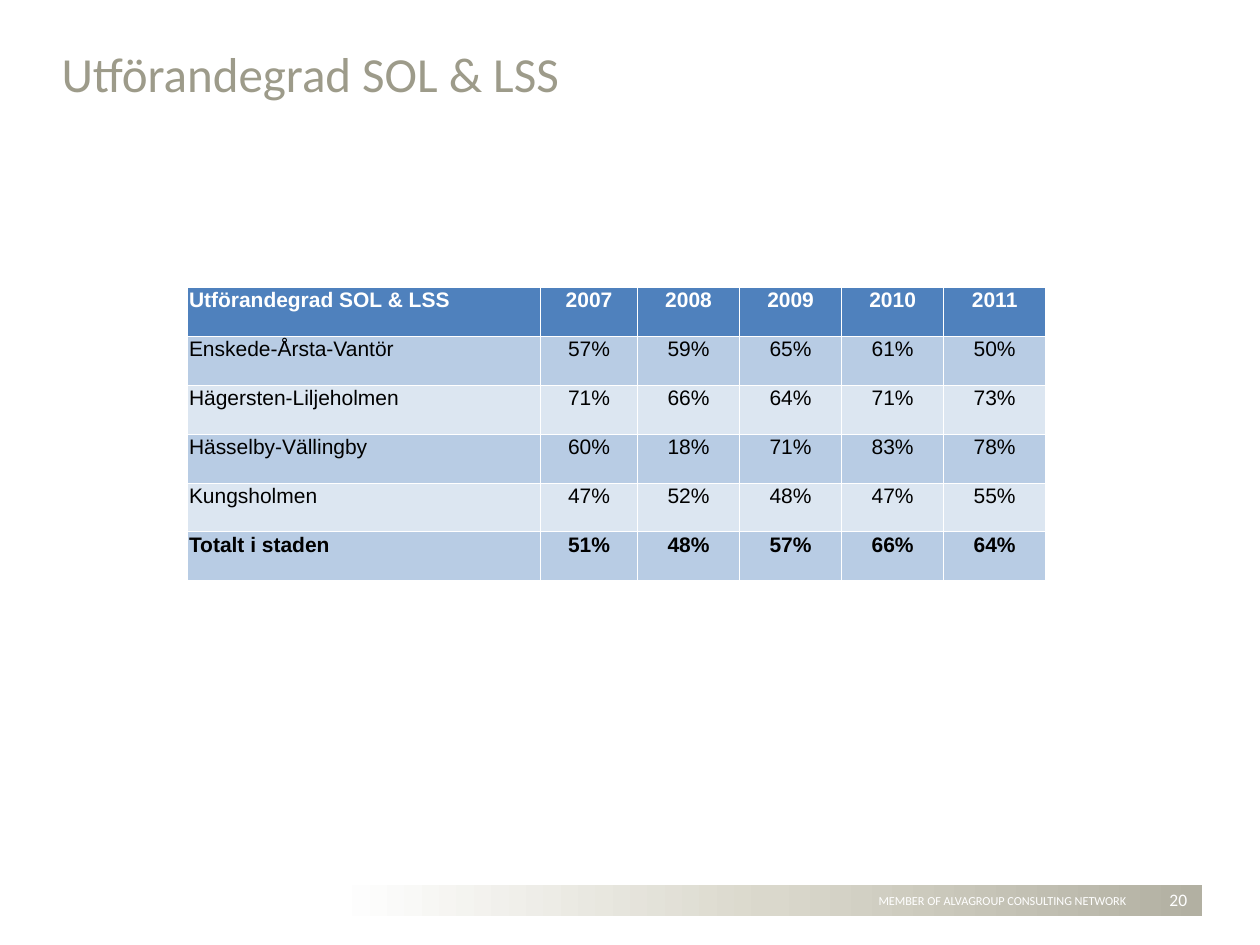
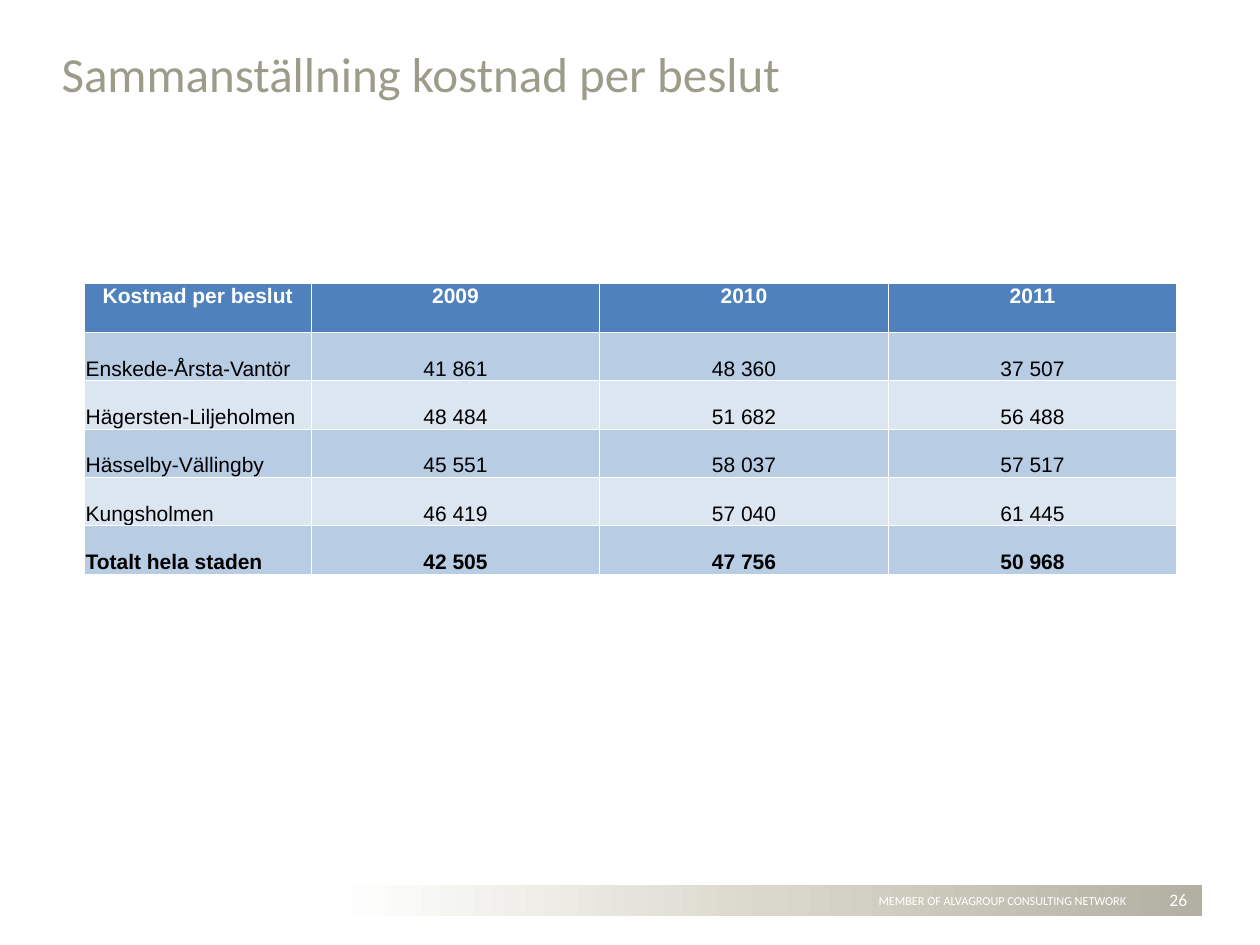
from copy import deepcopy

from lxml import etree
from pptx import Presentation
from pptx import util as u
from pptx.dml.color import RGBColor
from pptx.enum import shapes, text
from pptx.oxml import ns

COLORS = {
    "title": "9D9B8A",
    "white": "FFFFFF",
    "black": "000000",
    "band_dark": "B2B0A2",
    "band_mid": "DAD8CC",
    "header_row": "4F81BD",
    "odd_row": "B8CCE4",
    "even_row": "DCE6F1",
}
TITLE_BOX = (0.39, 0.07, 8.29, 0.79)
FOOTER_BOX = (2.66, 7.02, 6.88, 0.25)
NETWORK = "MEMBER OF ALVAGROUP CONSULTING NETWORK"
CENTER, LEFT, RIGHT = text.PP_ALIGN.CENTER, text.PP_ALIGN.LEFT, text.PP_ALIGN.RIGHT
TOP, MIDDLE, BOTTOM = (text.MSO_ANCHOR.TOP, text.MSO_ANCHOR.MIDDLE,
                       text.MSO_ANCHOR.BOTTOM)

EXECUTION = [
    ["Utförandegrad SOL & LSS", "2007", "2008", "2009", "2010", "2011"],
    ["Enskede-Årsta-Vantör", "57%", "59%", "65%", "61%", "50%"],
    ["Hägersten-Liljeholmen", "71%", "66%", "64%", "71%", "73%"],
    ["Hässelby-Vällingby", "60%", "18%", "71%", "83%", "78%"],
    ["Kungsholmen", "47%", "52%", "48%", "47%", "55%"],
    ["Totalt i staden", "51%", "48%", "57%", "66%", "64%"],
]
DECISION_COST = [
    ["Kostnad per beslut", "2009", "2010", "2011"],
    ["Enskede-Årsta-Vantör", "41 861", "48 360", "37 507"],
    ["Hägersten-Liljeholmen", "48 484", "51 682", "56 488"],
    ["Hässelby-Vällingby", "45 551", "58 037", "57 517"],
    ["Kungsholmen", "46 419", "57 040", "61 445"],
    ["Totalt hela staden", "42 505", "47 756", "50 968"],
]


def rgb(name):
    return RGBColor.from_string(COLORS[name])


def inches(box):
    return [u.Inches(length) for length in box]


def write(frame, words, size, color, font="Calibri", align=LEFT, bold=False):
    line = frame.paragraphs[0]
    line.text = words
    line.alignment = align
    line.font.name, line.font.size, line.font.bold = font, u.Pt(size), bold
    line.font.color.rgb = rgb(color)


def add_label(slide, box, words, size, color, align=LEFT, anchor=TOP, wrap=True):
    frame = slide.shapes.add_textbox(*inches(box)).text_frame
    frame.word_wrap = wrap
    frame.vertical_anchor = anchor
    write(frame, words, size, color, align=align)


def add_footer(slide, box, number):
    left, top, width, height = box

    # Band fading out to the left
    band = slide.shapes.add_shape(shapes.MSO_SHAPE.RECTANGLE, *inches(box))
    band.shadow.inherit = False
    band.line.fill.background()
    band.fill.gradient()
    band.fill.gradient_angle = 180
    first_stop = band.fill._fill._gradFill.gsLst[0]
    first_stop.addnext(deepcopy(first_stop))
    fade = [(0, "band_dark"), (0.5, "band_mid"), (1, "white")]
    for stop, (position, color) in zip(band.fill.gradient_stops, fade):
        stop.position = position
        stop.color.rgb = rgb(color)

    # Network name and page number
    add_label(slide, (left + 3.99, top + 0.02, 2.61, 0.22), NETWORK, 7, "white",
              CENTER, wrap=False)
    add_label(slide, (left + width - 0.48, top - 0.01, 0.46, height), str(number),
              10, "white", RIGHT, MIDDLE)


def add_borders(cell):
    properties = cell._tc.get_or_add_tcPr()
    for place, side in enumerate(("lnL", "lnR", "lnT", "lnB")):
        border = etree.Element(ns.qn(f"a:{side}"), w=str(u.Pt(0.5)))
        fill = etree.SubElement(border, ns.qn("a:solidFill"))
        etree.SubElement(fill, ns.qn("a:srgbClr"), val=COLORS["white"])
        properties.insert(place, border)


def add_data_table(slide, box, rows, widths, heading_align, body_anchor):
    table = slide.shapes.add_table(len(rows), len(widths), *inches(box)).table
    for column, width in zip(table.columns, widths):
        column.width = u.Inches(width)
    for r, row in enumerate(rows):
        is_header, is_total = r == 0, r == len(rows) - 1
        row_color = "header_row" if is_header else "odd_row" if r % 2 else "even_row"
        for c, value in enumerate(row):
            cell = table.cell(r, c)
            cell.margin_left = cell.margin_right = cell.margin_top = u.Inches(0.01)
            cell.margin_bottom = 0
            cell.vertical_anchor = TOP if is_header else body_anchor
            cell.fill.solid()
            cell.fill.fore_color.rgb = rgb(row_color)
            add_borders(cell)
            align = CENTER if c else heading_align if is_header else LEFT
            write(cell.text_frame, value, 12, "white" if is_header else "black",
                  "Arial", align, is_header or is_total)


def add_table_slide(deck, title, number, **table):
    slide = deck.slides.add_slide(deck.slide_layouts[6])
    add_footer(slide, FOOTER_BOX, number)
    add_label(slide, TITLE_BOX, title, 28, "title", anchor=BOTTOM)
    add_data_table(slide, **table)


def main():
    deck = Presentation()
    deck.slide_width, deck.slide_height = u.Inches(10), u.Inches(7.5)
    add_table_slide(deck, "Utförandegrad SOL & LSS", 20,
                    box=(1.49, 2.28, 6.81, 2.33), rows=EXECUTION,
                    widths=[2.8, 0.77] + [0.81] * 4,
                    heading_align=LEFT, body_anchor=TOP)
    add_table_slide(deck, "Sammanställning kostnad per beslut", 26,
                    box=(0.67, 2.25, 8.66, 2.31), rows=DECISION_COST,
                    widths=[1.8] + [2.29] * 3,
                    heading_align=CENTER, body_anchor=BOTTOM)
    deck.save("out.pptx")


if __name__ == "__main__":
    main()
